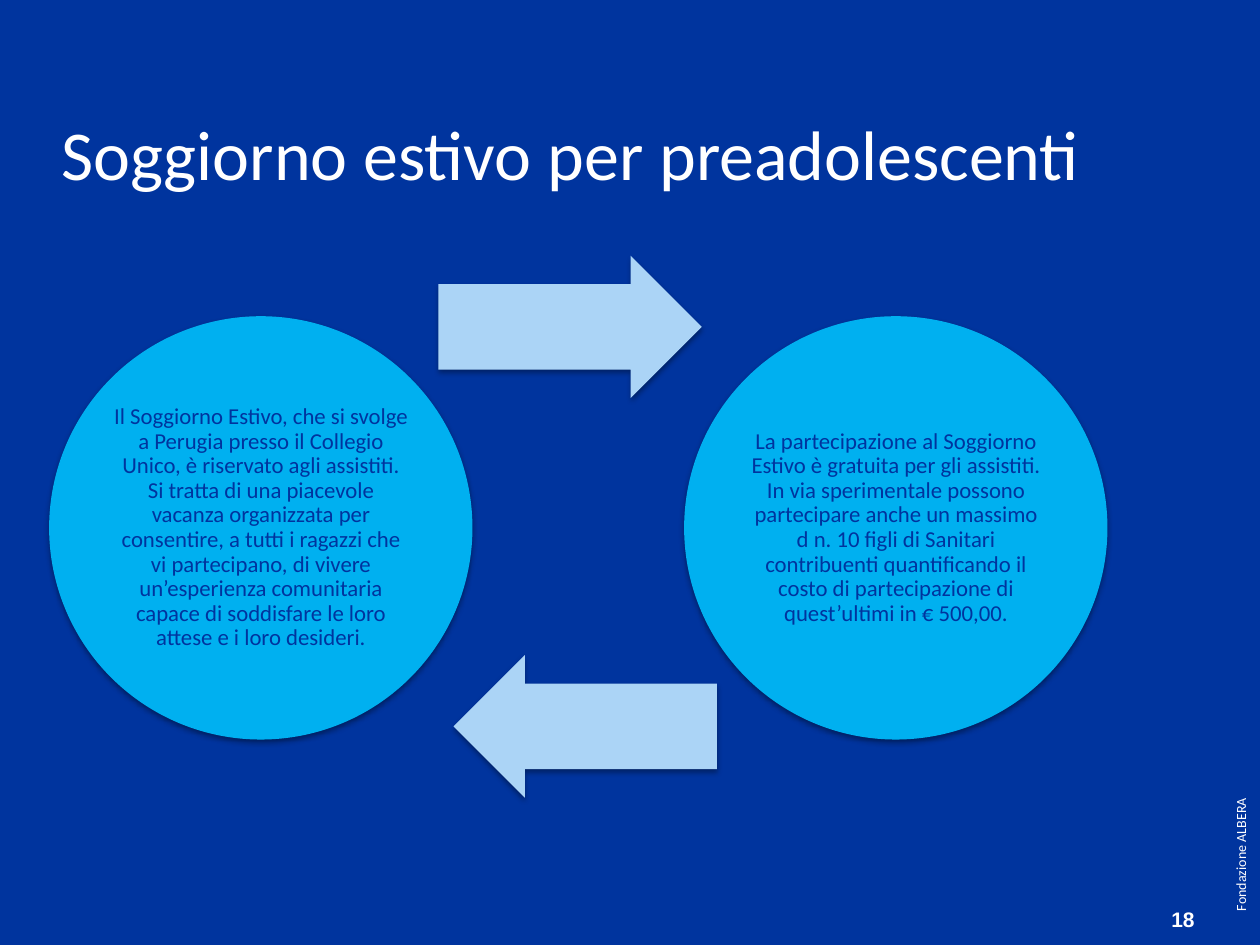
from lxml import etree
from pptx import Presentation
from pptx.dml.color import RGBColor
from pptx.enum.shapes import MSO_SHAPE
from pptx.enum.text import MSO_ANCHOR, PP_ALIGN
from pptx.oxml.ns import qn
from pptx.util import Inches, Pt

OVAL, ARROW = MSO_SHAPE.OVAL, MSO_SHAPE.RIGHT_ARROW
LEFT, CENTER, RIGHT = PP_ALIGN.LEFT, PP_ALIGN.CENTER, PP_ALIGN.RIGHT
TOP, MIDDLE, BOTTOM = MSO_ANCHOR.TOP, MSO_ANCHOR.MIDDLE, MSO_ANCHOR.BOTTOM

COLORS = {
    "background": "00349E",
    "circle": "00B0F0",
    "arrow": "ABD4F6",
    "light": "FFFFFF",
    "shadow": "000000",
}
COLUMNS, ROWS = 100, 75


class SlideBuilder:
    """Holds the style and the current slide; lengths are grid columns and rows."""

    def __init__(self, presentation):
        self.cell_width = presentation.slide_width / COLUMNS
        self.cell_height = presentation.slide_height / ROWS
        self.slide = presentation.slides.add_slide(presentation.slide_layouts[6])
        fill = self.slide.background.fill
        fill.solid()
        fill.fore_color.rgb = self.color("background")

    def color(self, name):
        return RGBColor.from_string(COLORS[name])

    def place(self, column, row, width, height):
        return (round(column * self.cell_width), round(row * self.cell_height),
                round(width * self.cell_width), round(height * self.cell_height))

    def set_text(self, frame, text, size, color, align, anchor, font="Calibri", bold=False):
        frame.word_wrap = True
        frame.vertical_anchor = anchor
        paragraph = frame.paragraphs[0]
        paragraph.text = text
        paragraph.alignment = align
        paragraph.font.name = font
        paragraph.font.size = Pt(size)
        paragraph.font.bold = bold
        paragraph.font.color.rgb = self.color(color)
        return paragraph

    def text(self, box, text, size, align=LEFT, anchor=TOP, rotation=0, **style):
        shape = self.slide.shapes.add_textbox(*self.place(*box))
        shape.rotation = rotation
        self.set_text(shape.text_frame, text, size, "light", align, anchor, **style)

    def shape(self, kind, box, color, opacity, distance):
        shape = self.slide.shapes.add_shape(kind, *self.place(*box))
        shape.fill.solid()
        shape.fill.fore_color.rgb = self.color(color)
        shape.line.fill.background()
        self.add_shadow(shape, opacity, distance)
        return shape

    def add_shadow(self, shape, opacity, distance):
        shape.shadow.inherit = False
        effects = shape.element.spPr.find(qn("a:effectLst"))
        shadow = etree.SubElement(effects, qn("a:outerShdw"), blurRad=str(Pt(3.1)),
                                  dist=str(Pt(distance)), dir="5400000", rotWithShape="0")
        color = etree.SubElement(shadow, qn("a:srgbClr"), val=COLORS["shadow"])
        etree.SubElement(color, qn("a:alpha"), val=str(opacity * 1000))

    def circle(self, column, row, diameter, text):
        shape = self.shape(OVAL, (column, row, diameter, diameter), "circle", 38, 1.6)
        frame = shape.text_frame
        frame.margin_left = frame.margin_right = Inches(0.02)
        frame.margin_top = frame.margin_bottom = Inches(0.02)
        paragraph = self.set_text(frame, text, 13, "background", CENTER, MIDDLE)
        paragraph.line_spacing = 0.9

    def arrow(self, column, row, rotation=0):
        shape = self.shape(ARROW, (column, row, 20.9, 11.3), "arrow", 35, 1.8)
        shape.adjustments[0] = 0.6
        shape.adjustments[1] = 0.5
        shape.rotation = rotation


def main():
    presentation = Presentation()
    presentation.slide_width = Inches(10)
    presentation.slide_height = Inches(7.5)
    builder = SlideBuilder(presentation)

    # Title
    builder.text((3.9, 2.5, 84, 13.4), "Soggiorno estivo per preadolescenti", 40,
                 anchor=BOTTOM)

    # Circles and the arrows that link them in a cycle
    circle_texts = [
        "Il Soggiorno Estivo, che si svolge a Perugia presso il Collegio Unico, "
        "è riservato agli assistiti. Si tratta di una piacevole vacanza organizzata "
        "per consentire, a tutti i ragazzi che vi partecipano, di vivere "
        "un’esperienza comunitaria capace di soddisfare le loro attese e i loro desideri.",
        "La partecipazione al Soggiorno Estivo è gratuita per gli assistiti. "
        "In via sperimentale possono partecipare anche un massimo d n. 10 figli di "
        "Sanitari contribuenti quantificando il costo di partecipazione di "
        "quest’ultimi in € 500,00.",
    ]
    diameter = 33.6
    for index, text in enumerate(circle_texts):
        builder.circle(3.9 + index * 1.5 * diameter, 25.1, diameter, text)
    builder.arrow(34.8, 20.3)
    builder.arrow(36, 52, rotation=180)

    # Side label and slide number
    builder.text((81.2, 54.8, 34.6, 2.4), "Fondazione ALBERA", 8, rotation=270)
    builder.text((86.2, 71.6, 9.6, 2.7), "18", 12, align=RIGHT, anchor=MIDDLE,
                 font="Arial", bold=True)

    presentation.save("out.pptx")


if __name__ == "__main__":
    main()
